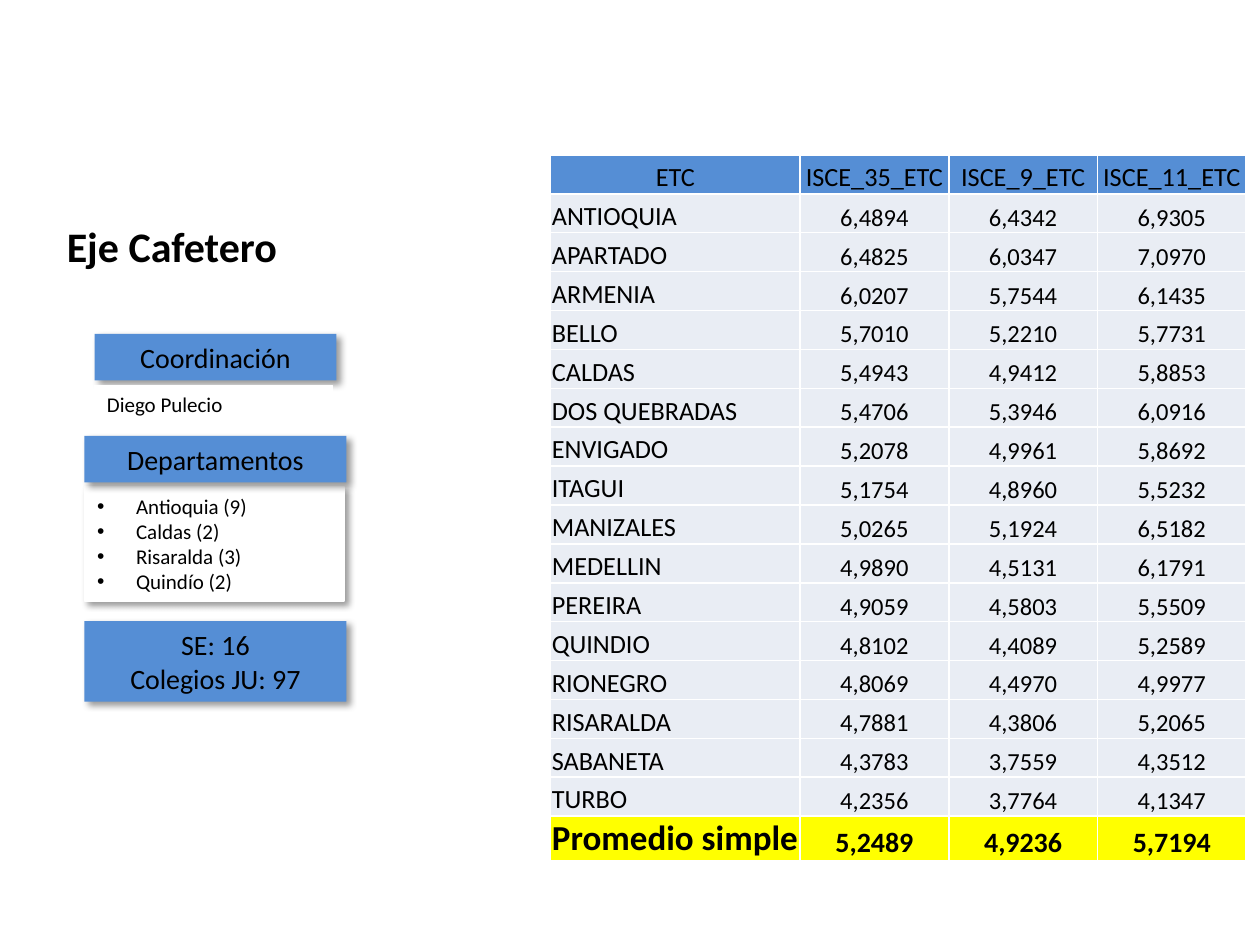
import pptx
import pptx.util
import pptx.dml.color
import pptx.enum.text
import pptx.enum.shapes
import pptx.oxml
import pptx.oxml.ns

Inches = pptx.util.Inches
Pt = pptx.util.Pt
RGB = pptx.dml.color.RGBColor
Align = pptx.enum.text.PP_ALIGN
Anchor = pptx.enum.text.MSO_ANCHOR

BLUE = RGB(0x55, 0x8E, 0xD5)
PALE = RGB(0xE9, 0xED, 0xF4)
YELLOW = RGB(0xFF, 0xFF, 0x00)
WHITE = RGB(0xFF, 0xFF, 0xFF)
BLACK = RGB(0, 0, 0)

TITLE = "Eje Cafetero"
DEPTS = ["Antioquia (9)", "Caldas (2)", "Risaralda (3)", "Quindío (2)"]
LABELS = [
    (["Departamentos"], (0.67, 3.46, 2.08, 0.37)),
    (["SE: 16", "Colegios JU: 97"], (0.67, 4.93, 2.08, 0.64)),
    (["Coordinación"], (0.75, 2.65, 1.92, 0.37)),
]
LEADER = ["Diego Pulecio"]
HEAD = ["ETC", "ISCE_35_ETC", "ISCE_9_ETC", "ISCE_11_ETC"]
SCORES = [
    ("ANTIOQUIA", "6,4894", "6,4342", "6,9305"),
    ("APARTADO", "6,4825", "6,0347", "7,0970"),
    ("ARMENIA", "6,0207", "5,7544", "6,1435"),
    ("BELLO", "5,7010", "5,2210", "5,7731"),
    ("CALDAS", "5,4943", "4,9412", "5,8853"),
    ("DOS QUEBRADAS", "5,4706", "5,3946", "6,0916"),
    ("ENVIGADO", "5,2078", "4,9961", "5,8692"),
    ("ITAGUI", "5,1754", "4,8960", "5,5232"),
    ("MANIZALES", "5,0265", "5,1924", "6,5182"),
    ("MEDELLIN", "4,9890", "4,5131", "6,1791"),
    ("PEREIRA", "4,9059", "4,5803", "5,5509"),
    ("QUINDIO", "4,8102", "4,4089", "5,2589"),
    ("RIONEGRO", "4,8069", "4,4970", "4,9977"),
    ("RISARALDA", "4,7881", "4,3806", "5,2065"),
    ("SABANETA", "4,3783", "3,7559", "4,3512"),
    ("TURBO", "4,2356", "3,7764", "4,1347"),
]
MEAN = ("Promedio simple", "5,2489", "4,9236", "5,7194")
WIDTHS = [1.98, 1.18, 1.18, 1.18]
HIGH, LAST = 5.6, 0.35

NS = pptx.oxml.ns.nsdecls("a")
SHADOW = (
    f'<a:effectLst {NS}><a:outerShdw blurRad="{Pt(4)}" dist="{Pt(3)}" dir="2700000" '
    'algn="tl" rotWithShape="0"><a:srgbClr val="000000"><a:alpha val="40000"/>'
    "</a:srgbClr></a:outerShdw></a:effectLst>"
)


def assign(item, values):
    for name, value in values.items():
        setattr(item, name, value)


def place(shape, box):
    sides = ("left", "top", "width", "height")
    assign(shape, dict(zip(sides, map(Inches, box))))


def write(frame, lines, size, align=Align.LEFT, bold=False, indent=0):
    frame.text = "\n".join(lines)
    for para in frame.paragraphs:
        if indent:
            props = para._p.get_or_add_pPr()
            props.set("marL", str(Inches(indent)))
            props.set("indent", str(-Inches(indent)))
        assign(para, {"alignment": align, "space_before": Pt(0)})
        for run in para.runs:
            assign(run.font, {"name": "Calibri", "size": Pt(size), "bold": bold})
            run.font.color.rgb = BLACK


def paint(shape, fill, edge=None, shade=True):
    shape.fill.solid()
    shape.fill.fore_color.rgb = fill
    if edge is None:
        shape.line.fill.background()
    else:
        shape.line.color.rgb = edge
        shape.line.width = Pt(0.75)
    shape.shadow.inherit = False
    if shade:
        props = shape._element.spPr
        props.replace(props.find(pptx.oxml.ns.qn("a:effectLst")), pptx.oxml.parse_xml(SHADOW))
    assign(shape.text_frame, {
        "word_wrap": True,
        "vertical_anchor": Anchor.MIDDLE,
        "auto_size": pptx.enum.text.MSO_AUTO_SIZE.NONE,
    })


def add_box(slide, box):
    kind = pptx.enum.shapes.MSO_SHAPE.RECTANGLE
    return slide.shapes.add_shape(kind, *map(Inches, box))


def edge_cell(cell):
    props = cell._tc.get_or_add_tcPr()
    for spot, side in enumerate(("lnL", "lnR", "lnT", "lnB")):
        line = (
            f'<a:{side} {NS} w="{Pt(1)}"><a:solidFill><a:srgbClr val="{WHITE}"/>'
            f"</a:solidFill></a:{side}>"
        )
        props.insert(spot, pptx.oxml.parse_xml(line))


def add_scores(slide):
    rows = [(HEAD, BLUE, 15, 15, False)]
    rows += [(row, PALE, 15, 14, False) for row in SCORES]
    rows.append((MEAN, YELLOW, 20, 16, True))
    spot = map(Inches, (4.37, 1.23, sum(WIDTHS), HIGH))
    table = slide.shapes.add_table(len(rows), len(HEAD), *spot).table
    for col, width in zip(table.columns, WIDTHS):
        col.width = Inches(width)
    step = (HIGH - LAST) / (len(rows) - 1)
    for r, (texts, fill, first, rest, bold) in enumerate(rows):
        table.rows[r].height = Inches(LAST if texts is MEAN else step)
        for c, text in enumerate(texts):
            cell = table.cell(r, c)
            assign(cell, {
                "margin_left": Inches(0.01),
                "margin_right": Inches(0.01),
                "margin_top": Inches(0.01),
                "margin_bottom": 0,
                "vertical_anchor": Anchor.BOTTOM,
            })
            align = Align.CENTER if c or r == 0 else Align.LEFT
            write(cell.text_frame, [text], rest if c else first, align, bold)
            cell.fill.solid()
            cell.fill.fore_color.rgb = fill
            edge_cell(cell)


def main():
    deck = pptx.Presentation()
    assign(deck, {"slide_width": Inches(10), "slide_height": Inches(7.5)})
    slide = deck.slides.add_slide(deck.slide_layouts[1])

    title, body = slide.placeholders
    place(title, (0.43, 1.7, 3.86, 0.5))
    write(title.text_frame, [TITLE], 24, bold=True)
    assign(title.text_frame, {"vertical_anchor": Anchor.TOP, "word_wrap": True})

    place(body, (0.67, 3.86, 2.06, 0.91))
    write(body.text_frame, DEPTS, 12, indent=0.31)
    paint(body, WHITE, WHITE)

    for lines, box in LABELS:
        label = add_box(slide, box)
        write(label.text_frame, lines, 16, Align.CENTER)
        paint(label, BLUE)

    name = add_box(slide, (0.75, 3.06, 1.89, 0.3))
    write(name.text_frame, LEADER, 12, indent=0.31)
    paint(name, WHITE, WHITE, shade=False)

    add_scores(slide)
    deck.save("out.pptx")


if __name__ == "__main__":
    main()
